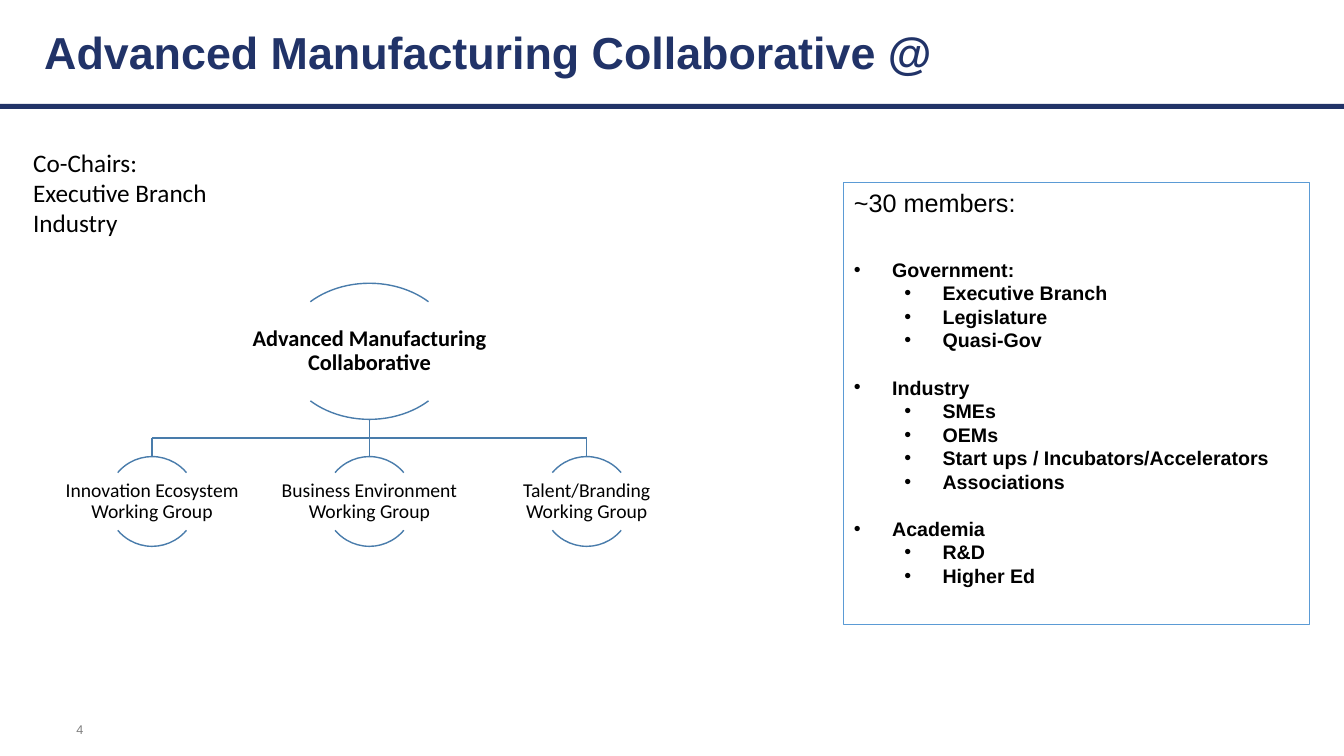
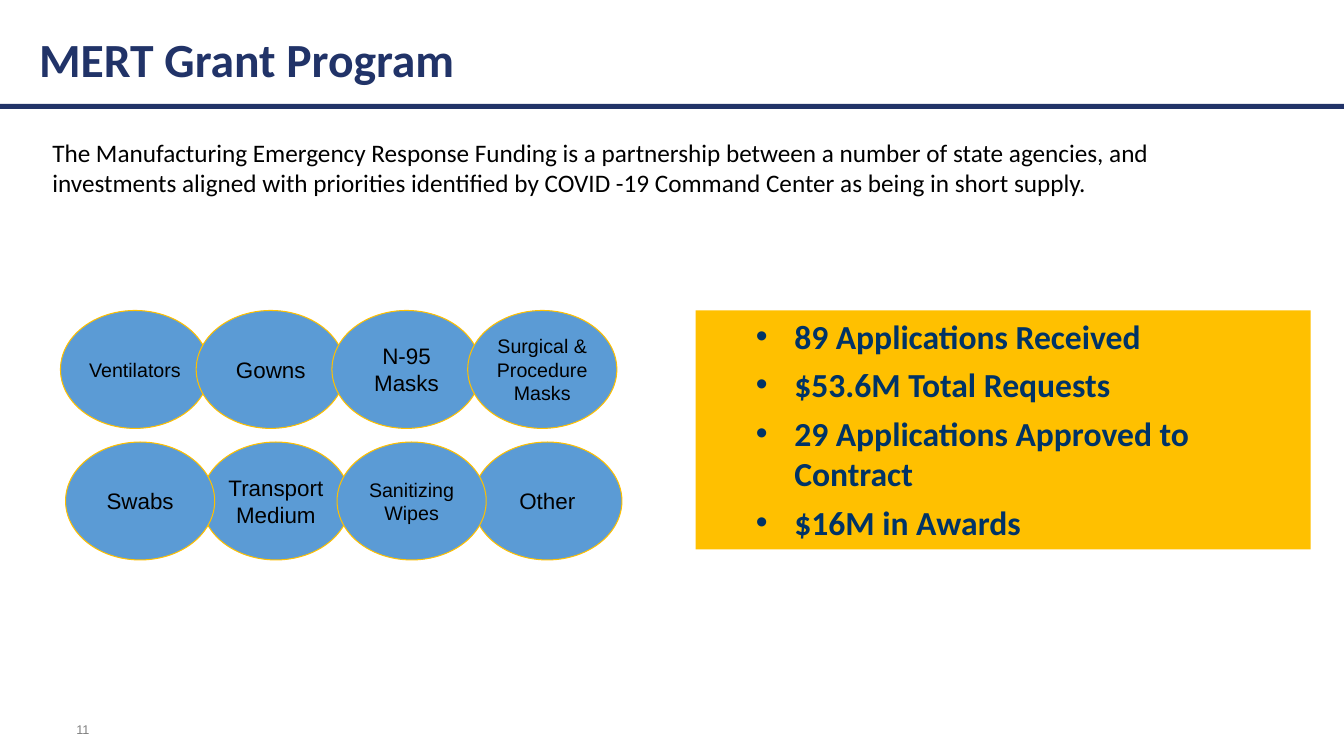
from lxml.etree import SubElement
from pptx import Presentation
from pptx.dml.color import RGBColor
from pptx.enum.shapes import MSO_CONNECTOR, MSO_SHAPE
from pptx.enum.text import MSO_ANCHOR, PP_ALIGN
from pptx.oxml.ns import qn
from pptx.util import Inches, Pt

NAVY, GOLD, BLUE, STEEL = "213368", "FFC000", "5B9BD5", "497CAB"
BLACK, GREY, INK = "000000", "808080", "003366"
rgb = RGBColor.from_string

prs = Presentation()
prs.slide_width, prs.slide_height = Inches(13.33), Inches(7.5)


def share(x, y):
    """Turn percentages of the slide's width and height into lengths."""
    return int(prs.slide_width * x / 100), int(prs.slide_height * y / 100)


def add_box(s, at, paras=(), shape=MSO_SHAPE.RECTANGLE, fill=None, line=None,
            weight=0.75, inset=None, font="Calibri", size=18, color=BLACK,
            bold=False, wrap=True, anchor=MSO_ANCHOR.TOP, align=PP_ALIGN.LEFT):
    """Add a text box, or a shape if filled or lined.

    A paragraph is a string or a dict: text, indent (inches, adds a bullet),
    size, bold, and fmt (paragraph attributes).
    """
    place = share(*at[:2]) + share(*at[2:])
    if fill or line:
        sp = s.shapes.add_shape(shape, *place)
        sp.shadow.inherit = False
    else:
        sp = s.shapes.add_textbox(*place)
    if fill:
        sp.fill.solid()
        sp.fill.fore_color.rgb = rgb(fill)
    else:
        sp.fill.background()
    if line:
        sp.line.color.rgb = rgb(line)
        sp.line.width = Pt(weight)
    else:
        sp.line.fill.background()

    tf = sp.text_frame
    tf.word_wrap, tf.vertical_anchor = wrap, anchor
    if inset is not None:
        for side in ("left", "top", "right", "bottom"):
            setattr(tf, f"margin_{side}", Inches(inset))
    for i, para in enumerate(paras):
        para = {"text": para} if isinstance(para, str) else para
        p = tf.paragraphs[0] if i == 0 else tf.add_paragraph()
        p.alignment = align
        if "indent" in para:
            pPr = p._p.get_or_add_pPr()
            pPr.set("marL", str(Inches(para["indent"])))
            pPr.set("indent", str(Inches(-0.38)))
            SubElement(pPr, qn("a:buFont")).set("typeface", "Arial")
            SubElement(pPr, qn("a:buChar")).set("char", "•")
        for name, value in para.get("fmt", {}).items():
            setattr(p, name, value)
        r = p.add_run()
        r.text = para["text"]
        values = {"name": font, "size": Pt(para.get("size", size)),
                  "bold": para.get("bold", bold)}
        for name, value in values.items():
            setattr(r.font, name, value)
        r.font.color.rgb = rgb(color)
    return sp


# Title, rule and page number of each slide
headers = [
    ("Advanced Manufacturing Collaborative @", (2.55, 2.67, 68.2, 8.53), "Arial", 32, "4"),
    ("MERT Grant Program", (2.18, 3.33, 90.5, 8.93), "Calibri", 34, "11"),
]
slides = []
for title, at, font, size, number in headers:
    s = prs.slides.add_slide(prs.slide_layouts[6])
    add_box(s, (4.95, 94.8, 2.7, 3.33), [number], font="Arial", size=9,
            color=GREY, wrap=False)
    add_box(s, (0, 13.73, 100, 0.67), fill=NAVY)
    add_box(s, at, [title], font=font, size=size, color=NAVY, bold=True)
    slides.append(s)
collaborative, grants = slides

# Organisation chart: centre, arc top, arc size, label top, label size
MID, PITCH = 27.49, 16.17
PARENT_END, BUS, CHILD_TOP = 55.47, 57.93, 60.4
links = [(MID, PARENT_END, MID, BUS), (MID - PITCH, BUS, MID + PITCH, BUS)]
nodes = [("Advanced Manufacturing Collaborative", MID, 37.47, (12.83, 18),
          40.67, (25.58, 11.6), 16)]
groups = ["Innovation Ecosystem", "Business Environment", "Talent/Branding"]
for col, group in enumerate(groups, -1):
    x = MID + col * PITCH
    links.append((x, BUS, x, CHILD_TOP))
    nodes.append((f"{group} Working Group", x, CHILD_TOP, (6.68, 11.87),
                  62.53, (13.35, 7.6), 14))

for x1, y1, x2, y2 in links:
    cxn = collaborative.shapes.add_connector(
        MSO_CONNECTOR.STRAIGHT, *share(x1, y1), *share(x2, y2))
    cxn.line.color.rgb = rgb(STEEL)
    cxn.line.width = Pt(1)
    SubElement(cxn._element.spPr, qn("a:effectLst"))

for label, x, arc_top, (arc_w, arc_h), top, (w, h), size in nodes:
    for start, end in ((132, 192), (24, 84)):
        arc = add_box(collaborative, (x - arc_w / 2, arc_top, arc_w, arc_h),
                      shape=MSO_SHAPE.ARC, line=STEEL, weight=1)
        arc.adjustments[0], arc.adjustments[1] = start, end
    add_box(collaborative, (x - w / 2, top, w, h),
            [{"text": label, "fmt": {"line_spacing": 0.9}}],
            size=size, bold=size == 16, inset=0.01,
            anchor=MSO_ANCHOR.MIDDLE, align=PP_ALIGN.CENTER)

# Members, by sector
sectors = {
    "Government:": ["Executive Branch", "Legislature", "Quasi-Gov"],
    "Industry": ["SMEs", "OEMs", "Start ups / Incubators/Accelerators", "Associations"],
    "Academia": ["R&D", "Higher Ed"],
}
ROW = Pt(16.8)
members = [{"text": "~30 members:", "size": 18, "bold": False}]
for sector, kinds in sectors.items():
    gap = Pt(28.7) if len(members) == 1 else ROW
    members.append({"text": sector, "indent": 0.38,
                    "fmt": {"space_before": gap, "line_spacing": ROW}})
    members += [{"text": kind, "indent": 0.88, "fmt": {"level": 1, "line_spacing": ROW}}
                for kind in kinds]
add_box(collaborative, (62.79, 24.13, 34.66, 58.53), members, line=BLUE,
        font="Arial", size=14, bold=True)
add_box(collaborative, (1.73, 18.8, 14.55, 13.47),
        ["Co-Chairs:", "Executive Branch", "Industry"], wrap=False)

# Grant programme
add_box(grants, (3.15, 17.47, 88.5, 9.47), [
    "The Manufacturing Emergency Response Funding is a partnership between a number of "
    "state agencies, and investments aligned with priorities identified by COVID -19 "
    "Command Center as being in short supply."])

# Supplies: column, row, size; later ones overlap earlier ones
supplies = [
    ("Ventilators", 0, 0, 14), ("Gowns", 1, 0, 16), ("N-95 Masks", 2, 0, 16),
    ("Surgical & Procedure Masks", 3, 0, 14), ("Other", 3, 1, 16),
    ("Transport Medium", 1, 1, 16), ("Swabs", 0, 1, 16), ("Sanitizing Wipes", 2, 1, 14),
]
for supply, col, row, size in supplies:
    add_box(grants, (4.5 + 10.1 * col + 0.38 * row, 41.07 + 17.4 * row, 11.1, 15.6),
            [supply], shape=MSO_SHAPE.OVAL, fill=BLUE, line=GOLD, inset=0.05,
            font="Arial", size=size, anchor=MSO_ANCHOR.MIDDLE, align=PP_ALIGN.CENTER)

results = ["89 Applications Received", "$53.6M Total Requests",
           "29 Applications Approved to Contract", "$16M in Awards"]
add_box(grants, (51.76, 41.07, 45.76, 31.6),
        [{"text": result, "indent": 0.88,
          "fmt": {"level": 1, "space_before": Pt(6 if i else 0)}}
         for i, result in enumerate(results)],
        fill=GOLD, size=24, color=INK, bold=True)

prs.save("out.pptx")
